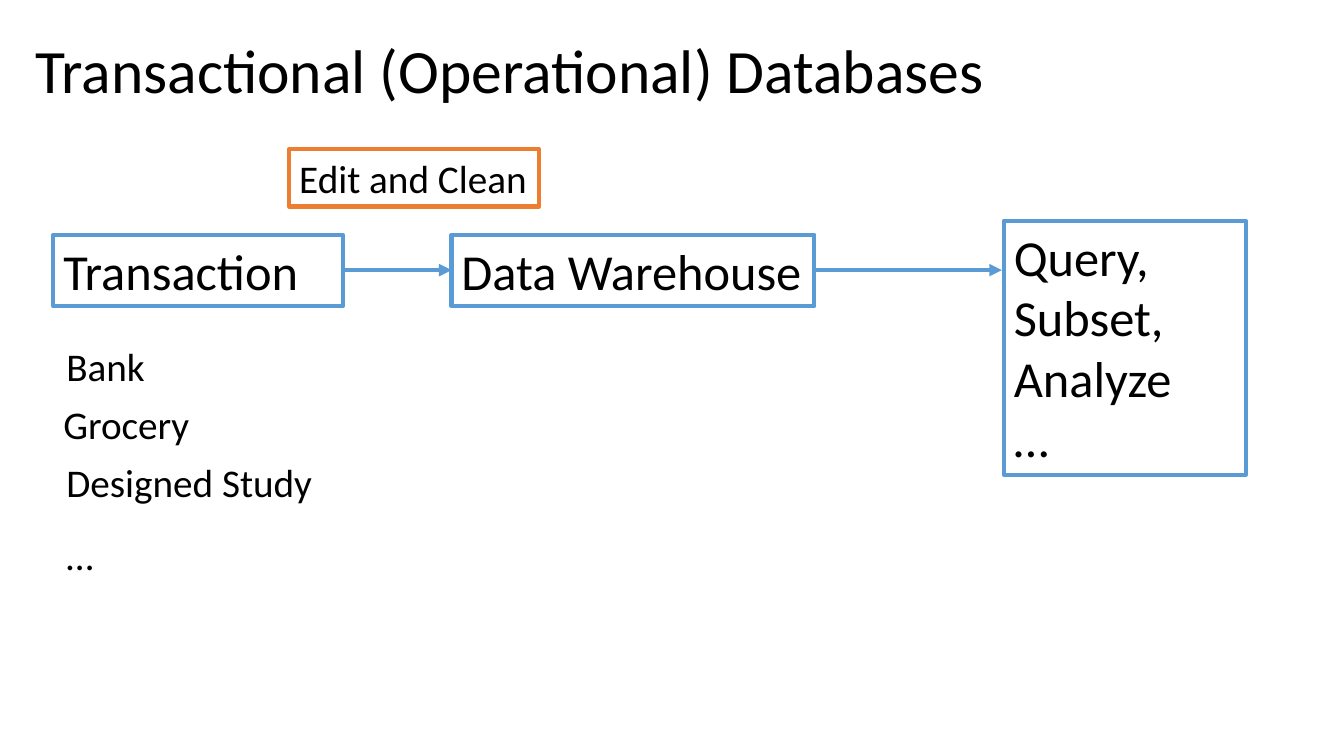
from pptx import Presentation, util as u
from pptx.dml.color import RGBColor
from pptx.enum import shapes, text
from pptx.oxml.ns import qn
from lxml import etree

BLACK, BLUE, ORANGE = "000000", "5B9BD5", "ED7D31"
TITLE = "Transactional (Operational) Databases"
# lines, left, top, width, height, size, outline, wrap
BOXES = [
    (["Transaction"], 38.16, 167.76, 206.64, 51.12, 36, BLUE, True),
    (["Data Warehouse"], 322.56, 167.76, 259.2, 51.12, 36, BLUE, False),
    (["Edit and Clean"], 206.64, 106.56, 178.56, 41.04, 28, ORANGE, False),
    (["Query, Subset, Analyze", "…"], 717.12, 157.68, 172.8, 181.44, 36, BLUE, True),
]
# word, left, top, width
SOURCES = [
    ("Bank", 40.32, 241.2, 87.12),
    ("Grocery", 38.16, 282.24, 193.68),
    ("Designed Study", 40.32, 324, 191.52),
    ("…", 40.32, 375.84, 191.52),
]
FLOW_Y = 192.96
ARROWS = [(244.8, 322.56), (581.76, 715.68)]


def color(hex):
    return RGBColor.from_string(hex)


def write(shape, lines, size, wrap=True):
    frame = shape.text_frame
    frame.text = "\n".join(lines)
    frame.word_wrap = wrap
    for para in frame.paragraphs:
        para.alignment = text.PP_ALIGN.LEFT
        para.font.name = "Calibri"
        para.font.size = u.Pt(size)
        para.font.color.rgb = color(BLACK)
    return frame


def place(*spot):
    return [u.Pt(n) for n in spot]


def label(lines, left, top, width, height, size, edge=None, wrap=True):
    """Add left-aligned text, in an outlined box if an edge colour is given."""
    spot = place(left, top, width, height)
    if edge:
        shape = slide.shapes.add_shape(shapes.MSO_SHAPE.RECTANGLE, *spot)
        shape.shadow.inherit = False
        shape.fill.background()
        shape.line.color.rgb = color(edge)
        shape.line.width = u.Pt(3)
    else:
        shape = slide.shapes.add_textbox(*spot)
    frame = write(shape, lines, size, wrap)
    frame.vertical_anchor = text.MSO_ANCHOR.TOP
    frame.auto_size = text.MSO_AUTO_SIZE.SHAPE_TO_FIT_TEXT


def arrow(start, end):
    line = slide.shapes.add_connector(
        shapes.MSO_CONNECTOR.STRAIGHT, *place(start, FLOW_Y, end, FLOW_Y))
    line.line.color.rgb = color(BLUE)
    line.line.width = u.Pt(3)
    etree.SubElement(line.line._get_or_add_ln(), qn("a:tailEnd"), type="triangle")
    etree.SubElement(line._element.spPr, qn("a:effectLst"))


deck = Presentation()
deck.slide_width, deck.slide_height = place(960, 540)
slide = deck.slides.add_slide(deck.slide_layouts[5])

title = slide.shapes.title
title.left, title.top, title.width, title.height = place(18, 0, 928.08, 104.4)
head = write(title, [TITLE], 44)
head.vertical_anchor = text.MSO_ANCHOR.MIDDLE
head.paragraphs[0].line_spacing = 0.9

for box in BOXES:
    label(*box)
for word, left, top, width in SOURCES:
    label([word], left, top, width, 41.04, 28)
for ends in ARROWS:
    arrow(*ends)

deck.save("out.pptx")
